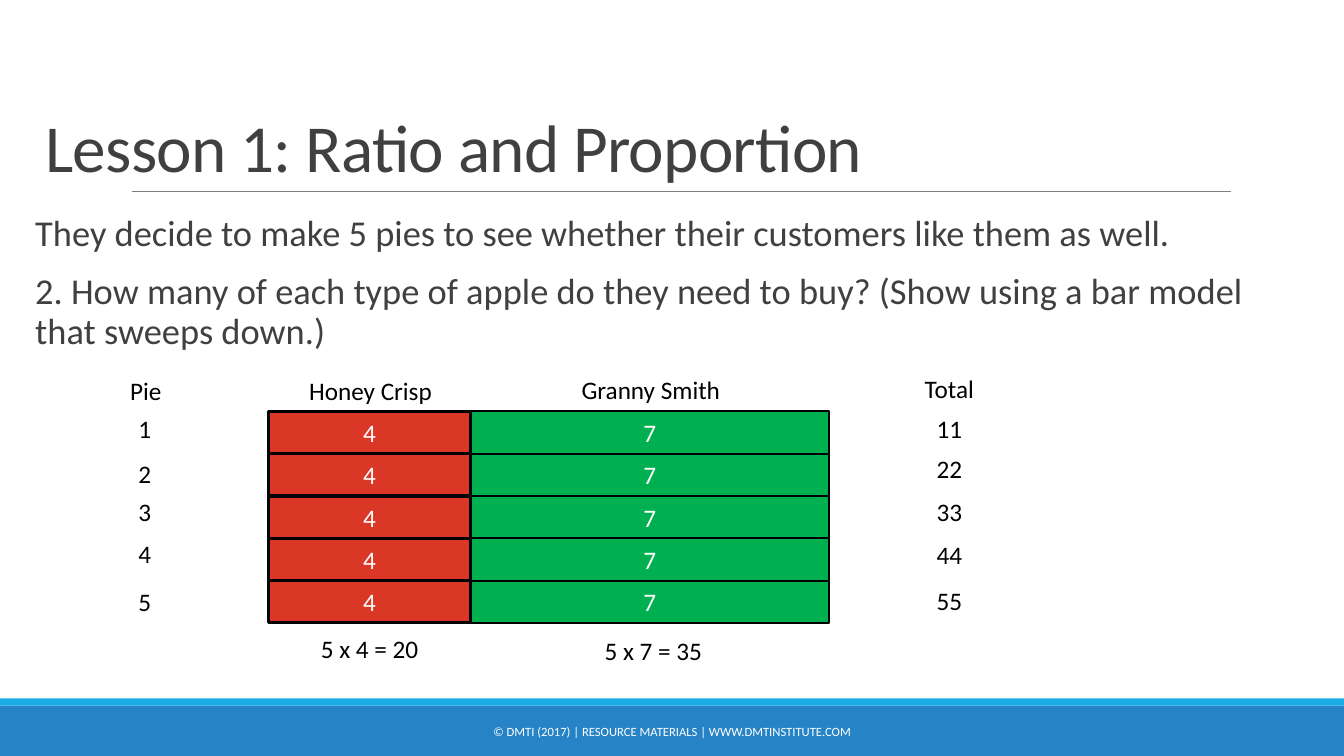
from pptx import Presentation
from pptx.dml.color import RGBColor
from pptx.enum.shapes import MSO_CONNECTOR, MSO_SHAPE
from pptx.enum.text import MSO_ANCHOR, MSO_AUTO_SIZE, PP_ALIGN
from pptx.oxml.ns import qn
from pptx.util import Inches, Pt
from lxml import etree

RECTANGLE = MSO_SHAPE.RECTANGLE
STRAIGHT = MSO_CONNECTOR.STRAIGHT
MIDDLE, BOTTOM = MSO_ANCHOR.MIDDLE, MSO_ANCHOR.BOTTOM
CENTER, LEFT = PP_ALIGN.CENTER, PP_ALIGN.LEFT
NO_AUTOFIT = MSO_AUTO_SIZE.NONE

TITLE_ONLY = 5
FONT = "Calibri"
BLACK, WHITE, GRAY = "000000", "FFFFFF", "404040"
RED, GREEN = "DA3726", "00B050"

BAR_TOP, BAR_HEIGHT = 4.08, 0.42
BARS = [("4", 2.66, 2.01, RED, 2.25), ("7", 4.67, 3.55, GREEN, 1.5)]
PIE_TOPS = [4.05, 4.5, 4.87, 5.29, 5.77]
TOTAL_TOPS = [4.05, 4.45, 4.87, 5.3, 5.76]
APPLES_PER_PIE = 11

LABELS = [
    ("Honey Crisp", 2.67, 3.67, 2.01),
    ("Granny Smith", 4.68, 3.66, 3.55),
    ("Total", 8.47, 3.65, 1.89),
    ("Pie", 0.44, 3.67, 2.01),
    ("5 x 4 = 20", 2.72, 6.23, 1.89),
    ("5 x 7 = 35", 4.73, 6.25, 3.5),
]
QUESTION = [
    "They decide to make 5 pies to see whether their customers like them as well.",
    "2. How many of each type of apple do they need to buy? "
    "(Show using a bar model that sweeps down.)",
]


def color(value):
    """Return the colour for a hex string."""
    return RGBColor.from_string(value)


def format_paragraph(paragraph, size, text_color, alignment):
    """Set the font and alignment of a paragraph."""
    paragraph.alignment = alignment
    paragraph.font.name = FONT
    paragraph.font.size = Pt(size)
    paragraph.font.color.rgb = color(text_color)


def add_rectangle(slide, left, top, width, height, fill, line_width=0, text=""):
    """Add a filled rectangle, outlined in black when it has a line width."""
    shape = slide.shapes.add_shape(
        RECTANGLE, Inches(left), Inches(top), Inches(width), Inches(height))
    shape.shadow.inherit = False
    shape.fill.solid()
    shape.fill.fore_color.rgb = color(fill)
    if line_width:
        shape.line.color.rgb = color(BLACK)
        shape.line.width = Pt(line_width)
    else:
        shape.line.fill.background()
    if text:
        shape.text_frame.text = text
        shape.text_frame.vertical_anchor = MIDDLE
        format_paragraph(shape.text_frame.paragraphs[0], 18, WHITE, CENTER)


def add_label(slide, text, left, top, width, size=18, text_color=BLACK):
    """Add a centred one-line label and return its text frame."""
    box = slide.shapes.add_textbox(
        Inches(left), Inches(top), Inches(width), Inches(0.4))
    frame = box.text_frame
    frame.word_wrap = True
    frame.text = text
    format_paragraph(frame.paragraphs[0], size, text_color, CENTER)
    return frame


def add_question(slide):
    """Add the problem text above the bar model."""
    box = slide.shapes.add_textbox(
        Inches(0.35), Inches(2.08), Inches(12.53), Inches(1.47))
    frame = box.text_frame
    frame.word_wrap = True
    frame.margin_left = frame.margin_right = 0
    frame.text = "\n".join(QUESTION)
    for index, paragraph in enumerate(frame.paragraphs):
        paragraph.line_spacing = 0.9
        paragraph.space_before = Pt(12 if index else 0)
        paragraph.space_after = Pt(2)
        format_paragraph(paragraph, 26, GRAY, LEFT)


def set_title(slide, text):
    """Place and format the title."""
    title = slide.shapes.title
    title.left, title.top = Inches(0.35), Inches(0.31)
    title.width, title.height = Inches(11.85), Inches(1.59)
    frame = title.text_frame
    frame.text = text
    frame.word_wrap = True
    frame.auto_size = NO_AUTOFIT
    frame.vertical_anchor = BOTTOM
    paragraph = frame.paragraphs[0]
    paragraph.line_spacing = 0.85
    format_paragraph(paragraph, 48, GRAY, LEFT)
    paragraph.runs[0]._r.get_or_add_rPr().set("spc", "-50")


def add_rule(slide):
    """Add the thin line under the title."""
    rule = slide.shapes.add_connector(
        STRAIGHT, Inches(1.31), Inches(1.9), Inches(12.21), Inches(1.9))
    rule.line.color.rgb = color("808080")
    rule.line.width = Pt(0.5)
    etree.SubElement(rule._element.spPr, qn("a:effectLst"))


def add_footer(slide):
    """Add the footer bands and the copyright line."""
    add_rectangle(slide, 0, 7, 13.33, 0.5, "2683C6")
    add_rectangle(slide, 0, 6.93, 13.33, 0.07, "1CADE4")
    frame = add_label(
        slide, "© DMTI (2017) | RESOURCE MATERIALS | WWW.DMTINSTITUTE.COM",
        4.03, 7.06, 5.27, 9, WHITE)
    frame.vertical_anchor = MIDDLE


def add_bar_model(slide):
    """Add one row of bars per pie, with its number and running total."""
    for row, (pie_top, total_top) in enumerate(zip(PIE_TOPS, TOTAL_TOPS)):
        pie = row + 1
        for text, left, width, fill, line_width in BARS:
            add_rectangle(slide, left, BAR_TOP + row * BAR_HEIGHT, width,
                          BAR_HEIGHT, fill, line_width, text)
        add_label(slide, str(pie), 0.56, pie_top, 1.75)
        add_label(slide, str(pie * APPLES_PER_PIE), 8.47, total_top, 1.89)
    for text, left, top, width in LABELS:
        add_label(slide, text, left, top, width)


def main():
    """Build the slide and save it."""
    presentation = Presentation()
    presentation.slide_width = Inches(13.33)
    presentation.slide_height = Inches(7.5)
    slide = presentation.slides.add_slide(presentation.slide_layouts[TITLE_ONLY])
    add_footer(slide)
    add_rule(slide)
    set_title(slide, "Lesson 1: Ratio and Proportion")
    add_question(slide)
    add_bar_model(slide)
    presentation.save("out.pptx")


if __name__ == "__main__":
    main()
